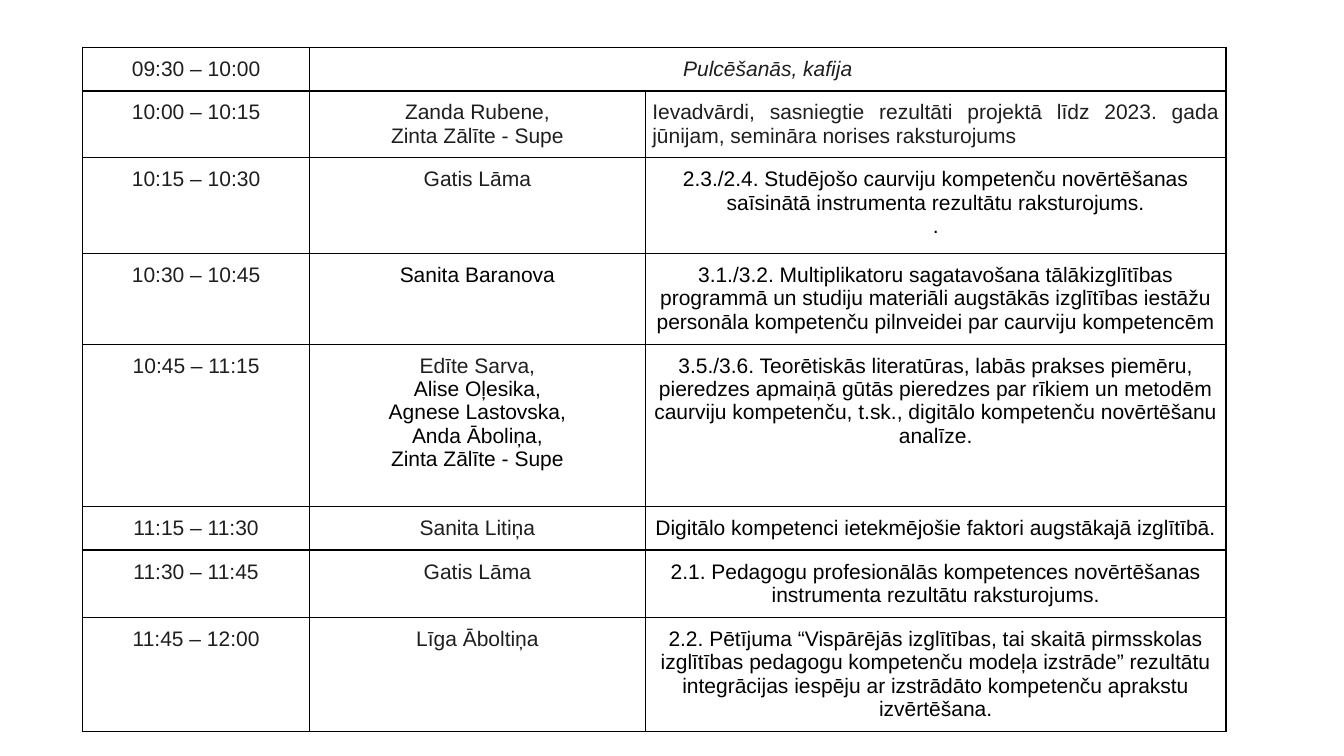
from dataclasses import dataclass

from lxml import etree
from pptx import Presentation
from pptx import util as u
from pptx.dml.color import RGBColor
from pptx.enum import text
from pptx.oxml import ns


@dataclass(frozen=True)
class Theme:
    font: str = "Arial"
    size: int = 15
    soft: str = "201F1E"
    black: str = "000000"
    paper: str = "FFFFFF"
    border: int = 1


theme = Theme()

# Content: time, speakers, topic lines, row height in inches
agenda = [
    ("09:30 – 10:00", ["Pulcēšanās, kafija"], None, 0.43),
    ("10:00 – 10:15", ["Zanda Rubene,", "Zinta Zālīte - Supe"],
     ["Ievadvārdi, sasniegtie rezultāti projektā līdz 2023. gada jūnijam, "
      "semināra norises raksturojums"], 0.66),
    ("10:15 – 10:30", ["Gatis Lāma"],
     ["2.3./2.4. Studējošo caurviju kompetenču novērtēšanas saīsinātā "
      "instrumenta rezultātu raksturojums.", "."], 0.95),
    ("10:30 – 10:45", ["Sanita Baranova"],
     ["3.1./3.2. Multiplikatoru sagatavošana tālākizglītības programmā un "
      "studiju materiāli augstākās izglītības iestāžu personāla kompetenču "
      "pilnveidei par caurviju kompetencēm"], 0.9),
    ("10:45 – 11:15",
     ["Edīte Sarva,", "Alise Oļesika,", "Agnese Lastovska,", "Anda Āboliņa,",
      "Zinta Zālīte - Supe"],
     ["3.5./3.6. Teorētiskās literatūras, labās prakses piemēru, pieredzes "
      "apmaiņā gūtās pieredzes par rīkiem un metodēm caurviju kompetenču, "
      "t.sk., digitālo kompetenču novērtēšanu analīze."], 1.61),
    ("11:15 – 11:30", ["Sanita Litiņa"],
     ["Digitālo kompetenci ietekmējošie faktori augstākajā izglītībā."], 0.43),
    ("11:30 – 11:45", ["Gatis Lāma"],
     ["2.1. Pedagogu profesionālās kompetences novērtēšanas instrumenta "
      "rezultātu raksturojums."], 0.67),
    ("11:45 – 12:00", ["Līga Āboltiņa"],
     ["2.2. Pētījuma “Vispārējās izglītības, tai skaitā pirmsskolas izglītības "
      "pedagogu kompetenču modeļa izstrāde” rezultātu integrācijas iespēju ar "
      "izstrādāto kompetenču aprakstu izvērtēšana."], 1.12),
]
opening_row, intro_row, joint_row = 0, 1, 4
black_speakers = {"Sanita Baranova"} | set(agenda[joint_row][1][1:])
columns = [2.25, 3.33, 5.76]
left, top = 0.82, 0.47


def style_cell(cell):
    """White fill, tight side margins and a thin border all round."""
    cell.margin_left = cell.margin_right = u.Inches(0.07)
    cell.margin_top = cell.margin_bottom = u.Inches(0.1)
    cell.fill.solid()
    cell.fill.fore_color.rgb = RGBColor.from_string(theme.paper)
    props = cell._tc.get_or_add_tcPr()
    for order, side in enumerate(("lnL", "lnR", "lnT", "lnB")):
        line = etree.Element(ns.qn(f"a:{side}"), w=str(u.Pt(theme.border)))
        fill = etree.SubElement(line, ns.qn("a:solidFill"))
        etree.SubElement(fill, ns.qn("a:srgbClr"), val=theme.black)
        props.insert(order, line)


def write_cell(cell, lines, align=text.PP_ALIGN.CENTER, italic=False):
    """One paragraph for each (words, colour) pair."""
    frame = cell.text_frame
    for index, (words, colour) in enumerate(lines):
        para = frame.add_paragraph() if index else frame.paragraphs[0]
        para.alignment = align
        span = para.add_run()
        span.text = words
        span.font.name = theme.font
        span.font.size = u.Pt(theme.size)
        span.font.italic = italic
        span.font.color.rgb = RGBColor.from_string(colour)


def main():
    deck = Presentation()
    deck.slide_width, deck.slide_height = u.Inches(13.33), u.Inches(7.5)
    page = deck.slides.add_slide(deck.slide_layouts[6])

    # Table grid
    heights = [row[-1] for row in agenda]
    table = page.shapes.add_table(
        len(agenda), len(columns), u.Inches(left), u.Inches(top),
        u.Inches(sum(columns)), u.Inches(sum(heights))).table
    table.first_row = table.horz_banding = False
    for column, width in zip(table.columns, columns):
        column.width = u.Inches(width)
    for row, height in zip(table.rows, heights):
        row.height = u.Inches(height)
    for cell in table.iter_cells():
        style_cell(cell)
    table.cell(opening_row, 1).merge(table.cell(opening_row, 2))

    # Agenda text
    for index, (time, speakers, topic, _) in enumerate(agenda):
        write_cell(table.cell(index, 0), [(time, theme.soft)])
        late_black = black_speakers if index >= 3 else set()
        write_cell(table.cell(index, 1),
                   [(name, theme.black if name in late_black else theme.soft)
                    for name in speakers], italic=index == opening_row)
        if topic:
            intro = index == intro_row
            write_cell(table.cell(index, 2),
                       [(words, theme.soft if intro else theme.black)
                        for words in topic],
                       text.PP_ALIGN.JUSTIFY if intro else text.PP_ALIGN.CENTER)

    deck.save("out.pptx")


if __name__ == "__main__":
    main()
